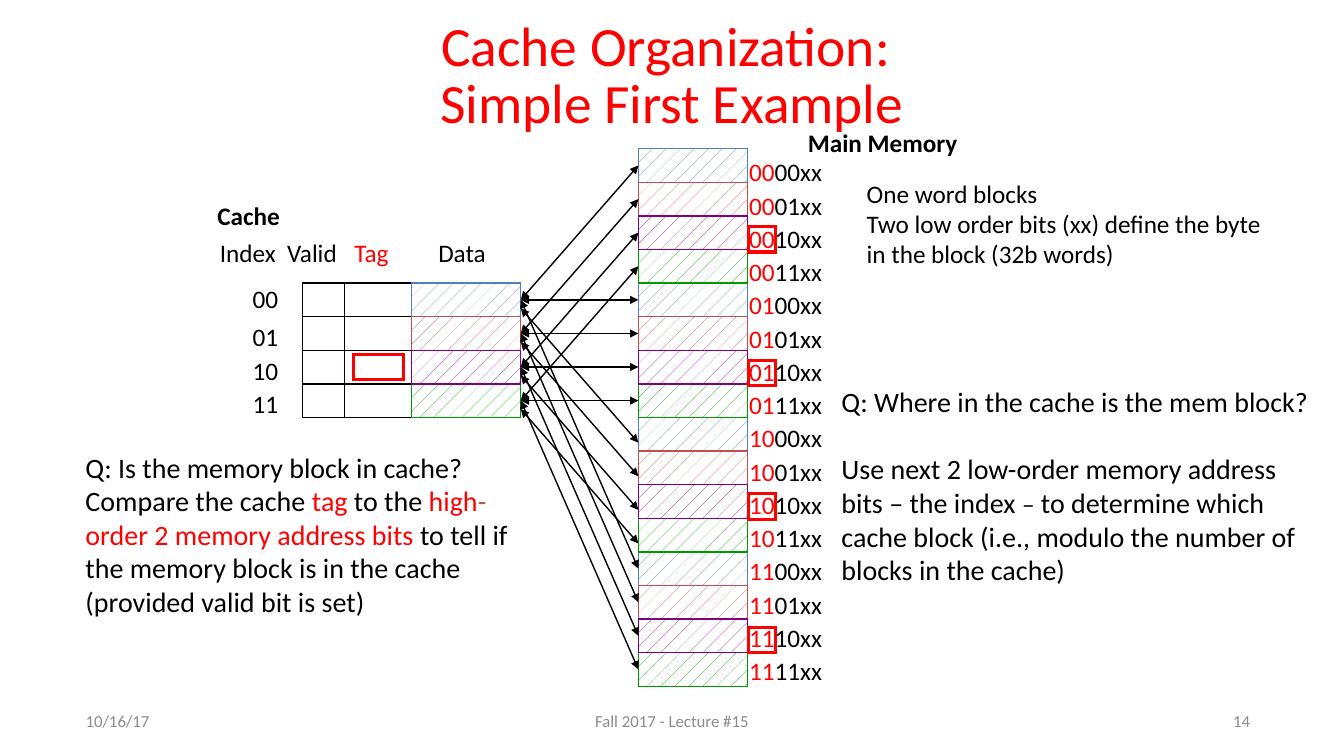
from collections import namedtuple
from dataclasses import dataclass

from lxml import etree
from pptx import Presentation
from pptx import util as u
from pptx.dml.color import RGBColor
from pptx.enum import dml, shapes, text
from pptx.oxml.ns import qn

PX = 7620
ROW = 40
BITS = ("00", "01", "10", "11")
Box = namedtuple("Box", "left top width height")
Span = namedtuple("Span", "words color size", defaults=(None, None))
BREAK = Span("\n")


@dataclass(frozen=True)
class Theme:
    """Colours, font and type sizes of the slide."""
    font: str = "Calibri"
    black: str = "000000"
    white: str = "FFFFFF"
    red: str = "FF0000"
    gray: str = "8C8C8C"
    blue: str = "4F81BD"
    brick: str = "C0504D"
    purple: str = "800080"
    green: str = "009900"
    title: float = 39.6
    question: int = 20
    label: int = 18
    footer: int = 12
    line: float = 1
    marker: float = 2.25


THEME = Theme()
BLOCK_COLORS = (THEME.blue, THEME.brick, THEME.purple, THEME.green)
DRAW_ORDER = (0, 3, 1, 2)


def rgb(color):
    """Turn a hex string into a colour."""
    return RGBColor.from_string(color)


def assign(target, values):
    """Set every attribute named in a dict."""
    for name, value in values.items():
        setattr(target, name, value)


def scaled(*lengths):
    """Turn px lengths into EMU."""
    return [length * PX for length in lengths]


def write(page, box, lines, size=THEME.label, color=THEME.black, bold=False,
          wrap=True, grow=True, **layout):
    """Add a text box whose lines are strings or lists of spans."""
    frame = page.shapes.add_textbox(*scaled(*box)).text_frame
    fit = text.MSO_AUTO_SIZE
    assign(frame, {
        "word_wrap": wrap,
        "auto_size": fit.SHAPE_TO_FIT_TEXT if grow else fit.NONE,
        "vertical_anchor": text.MSO_ANCHOR.TOP if grow else text.MSO_ANCHOR.MIDDLE,
    })
    for number, line in enumerate(lines):
        para = frame.add_paragraph() if number else frame.paragraphs[0]
        assign(para, layout)
        for span in [Span(line)] if isinstance(line, str) else line:
            if span is BREAK:
                para.add_line_break()
                continue
            run = para.add_run()
            run.text = span.words
            assign(run.font, {"name": THEME.font, "bold": bold,
                              "size": u.Pt(span.size or size)})
            run.font.color.rgb = rgb(span.color or color)
    return frame


def label(page, left, top, width, words, **style):
    """Add a one-line label that does not wrap."""
    write(page, Box(left, top, width, 48), [words], wrap=False, **style)


def outline(page, box, color=THEME.black, weight=THEME.line):
    """Add an unfilled rectangle with sharp corners."""
    shape = page.shapes.add_shape(shapes.MSO_SHAPE.RECTANGLE, *scaled(*box))
    shape.shadow.inherit = False
    shape.fill.background()
    shape.line.color.rgb = rgb(color)
    shape.line.width = u.Pt(weight)
    etree.SubElement(shape.line._get_or_add_ln(), qn("a:miter"), lim="800000")
    return shape


def block_stack(page, box):
    """Stack patterned blocks that cycle through the four index colours."""
    for index in DRAW_ORDER:
        color = BLOCK_COLORS[index]
        for top in range(box.top + index * ROW, box.top + box.height, 4 * ROW):
            fill = outline(page, Box(box.left, top, box.width, ROW), color).fill
            fill.patterned()
            fill.pattern = dml.MSO_PATTERN.PERCENT_5
            fill.fore_color.rgb = rgb(color)
            fill.back_color.rgb = rgb(THEME.white)


def double_arrow(page, start, end):
    """Join two points with a line that has a head at each end."""
    line = page.shapes.add_connector(shapes.MSO_CONNECTOR.STRAIGHT,
                                     *scaled(*start, *end))
    line.line.color.rgb = rgb(THEME.black)
    line.line.width = u.Pt(THEME.line)
    for tag in ("a:headEnd", "a:tailEnd"):
        etree.SubElement(line.line._get_or_add_ln(), qn(tag), type="triangle")
    etree.SubElement(line._element.spPr, qn("a:effectLst"))


def heading(page, box):
    """Write the two-line title."""
    write(page, box,
          [[Span("Cache Organization: "), BREAK, Span("Simple First Example")]],
          size=THEME.title, color=THEME.red, grow=False,
          alignment=text.PP_ALIGN.CENTER, line_spacing=0.85)


def cache(page, box):
    """Draw the four-row cache with its headings and index labels."""
    left, top = box.left, box.top
    valid, tag = 50, 80
    for row in range(len(BITS)):
        outline(page, Box(left, top + row * ROW, valid, ROW))
        outline(page, Box(left + valid, top + row * ROW, tag, ROW))
    data = left + valid + tag
    block_stack(page, Box(data, top, box.width - valid - tag, box.height))
    outline(page, Box(left + 61, top + 85, 59, 30), THEME.red, THEME.marker)
    label(page, left - 113, top - 104, 100, "Cache", bold=True)
    for shift, width, words, color in (
            (-110, 91, "Index", THEME.black), (-30, 84, "Valid", THEME.black),
            (50, 65, "Tag", THEME.red), (150, 82, "Data", THEME.black)):
        label(page, left + shift, top - 60, width, words, color=color)
    for bits, shift in zip(BITS, (-6, 40, 80, 120)):
        label(page, left - 71, top + shift, 55, bits)


def memory(page, box):
    """Draw the sixteen memory blocks with their addresses."""
    block_stack(page, box)
    right = box.left + box.width
    label(page, right + 60, box.top - 31, 204, "Main Memory", bold=True)
    addresses = [[Span(high, THEME.red), Span(low + "xx")]
                 for high in BITS for low in BITS]
    write(page, Box(right - 10, box.top, 130, 652), addresses, line_spacing=1.1)
    for number in range(len(BITS)):
        outline(page, Box(right + 1, box.top + 93 + number * 159, 32, 30),
                THEME.red, THEME.marker)


def mapping(page, cache_box, memory_box):
    """Link each memory block to the cache row that can hold it."""
    for group, shift in enumerate((20, 20, 30, 20)):
        for row in range(len(BITS)):
            block = group * len(BITS) + row
            double_arrow(page,
                         (memory_box.left, memory_box.top + block * ROW + shift),
                         (cache_box.left + cache_box.width,
                          cache_box.top + row * ROW + shift))


def lookup_note(page, box):
    """Explain how the tag is compared."""
    write(page, box, [
        "Q: Is the memory block in cache?",
        [Span("Compare the cache "), Span("tag ", THEME.red), Span("to the "),
         Span("high", THEME.red), Span("-", THEME.brick),
         Span("order 2 memory address bits ", THEME.red),
         Span("to tell if the memory block is in the cache "
              "(provided valid bit is set)")],
    ], size=THEME.question)


def index_note(page, box):
    """Explain how the index selects a cache block."""
    frame = write(page, box, [
        "Q: Where in the cache is the mem block?",
        [Span("Use next 2 low-order memory address bits – the index "),
         Span("–", size=THEME.label),
         Span(" to determine which cache block "
              "(i.e., modulo the number of blocks in the cache)")],
    ], size=THEME.question)
    frame.paragraphs[0].space_after = u.Pt(24)


def word_note(page, box):
    """Describe the block size."""
    write(page, box, ["One word blocks", "Two low order bits (xx) define the "
                      "byte in the block (32b words)"])


def footer(page, box):
    """Write the date, the lecture and the page number."""
    align = text.PP_ALIGN
    for shift, width, words, side in (
            (0, 280, "10/16/17", align.LEFT),
            (520, 380, "Fall 2017 - Lecture #15", align.CENTER),
            (box.width - 280, 280, "14", align.RIGHT)):
        write(page, Box(box.left + shift, box.top, width, box.height), [words],
              size=THEME.footer, color=THEME.gray, grow=False, alignment=side)


def main():
    """Build and save the slide."""
    deck = Presentation()
    assign(deck, {"slide_width": 1600 * PX, "slide_height": 900 * PX})
    page = deck.slides.add_slide(deck.slide_layouts[6])
    cache_box = Box(360, 337, 260, 4 * ROW)
    memory_box = Box(760, 177, 130, 16 * ROW)
    heading(page, Box(260, 36, 1080, 114))
    cache(page, cache_box)
    memory(page, memory_box)
    mapping(page, cache_box, memory_box)
    lookup_note(page, Box(90, 530, 571, 214))
    index_note(page, Box(990, 452, 590, 254))
    word_note(page, Box(1020, 206, 510, 121))
    footer(page, Box(90, 834, 1410, 48))
    deck.save("out.pptx")


if __name__ == "__main__":
    main()
